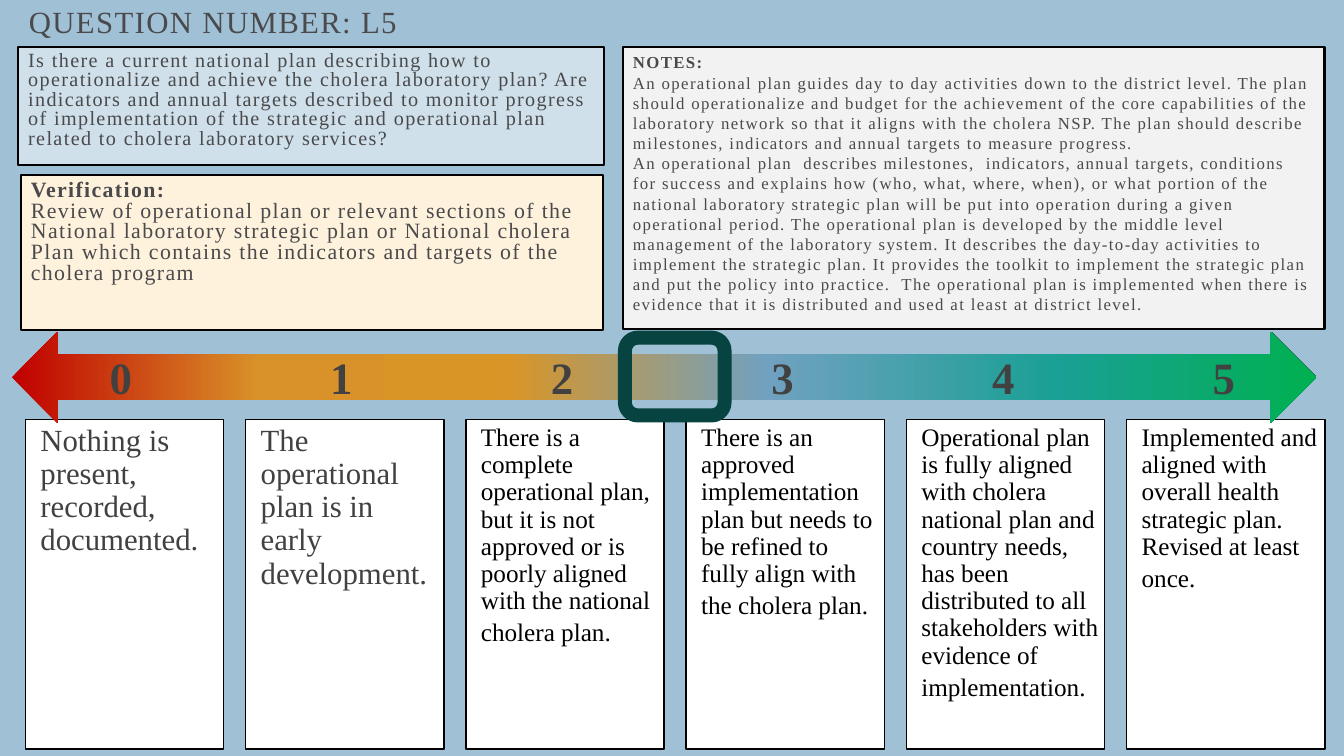
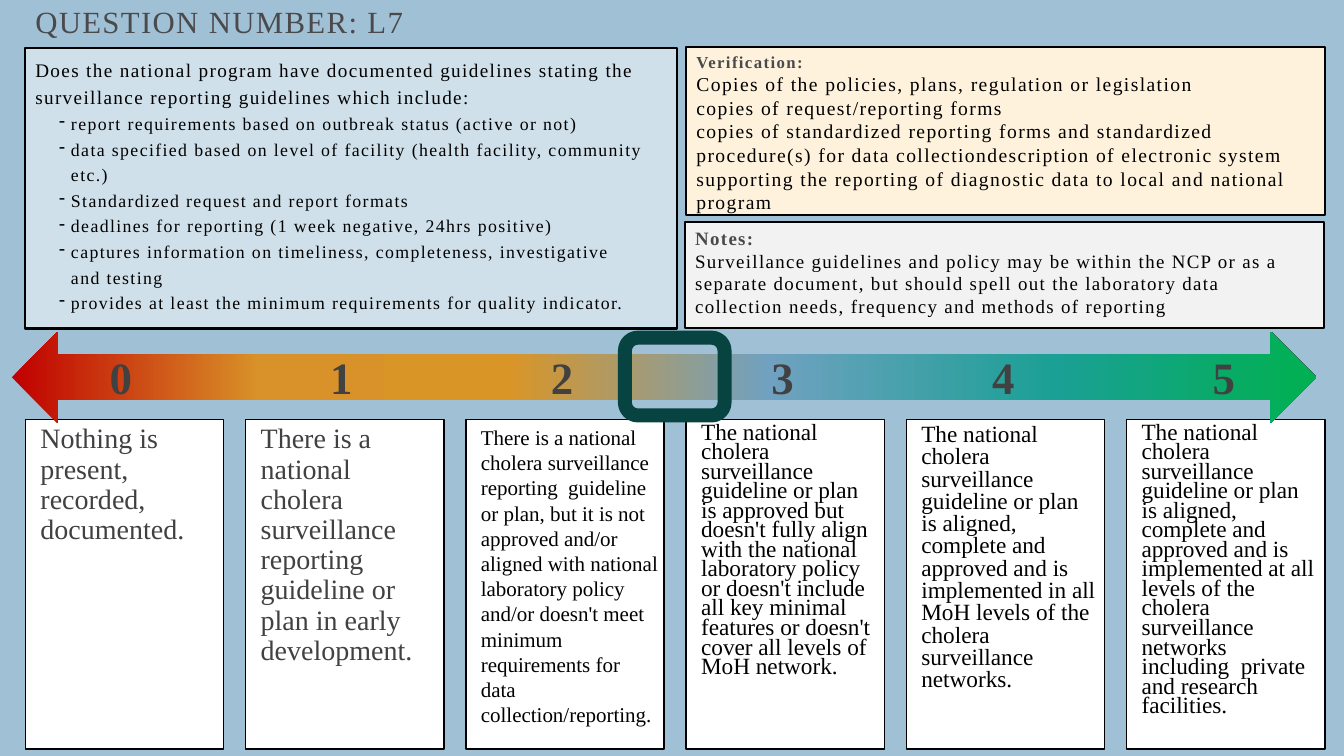
from dataclasses import dataclass
from typing import Any

from lxml import etree
from pptx import Presentation
from pptx import util as u
from pptx.dml import color as dml
from pptx.enum import shapes, text
from pptx.oxml import ns

COLORS = {
    "page": "A0C1D5",
    "question": "CFE0EA",
    "notes": "F2F2F2",
    "verification": "FEF2DD",
    "card": "FFFFFF",
    "black": "000000",
    "grey": "4A4A4C",
    "score": "414142",
    "frame": "074441",
}
SCALE_STOPS = {0: "C00000", 19: "D99229", 38: "DA9527",
               58: "70A1C0", 80: "1AA095", 100: "00B050"}
FONT = "Times New Roman"
CARD_STEP, LABEL_STEP = 5.55, 5.56
CARD_FORMAT = {f"margin_{side}": u.Cm(0.13)
               for side in ("left", "top", "right", "bottom")}
LABEL_FORMAT = {"vertical_anchor": text.MSO_ANCHOR.MIDDLE}


@dataclass(frozen=True)
class Box:
    """A rectangle in centimetres."""
    left: float
    top: float
    width: float
    height: float

    def lengths(self) -> tuple:
        return tuple(map(u.Cm, (self.left, self.top, self.width, self.height)))


@dataclass(frozen=True)
class Span:
    text: str
    size: float
    color: str = "grey"
    bold: bool = False
    tracking: int = 100


@dataclass(frozen=True)
class Para:
    spans: tuple[Span, ...]
    spacing: float = 1.0
    margin: float = 0
    hanging: float = 0
    bullet: str = ""
    align: Any = text.PP_ALIGN.LEFT


@dataclass(frozen=True)
class Panel:
    box: Box
    fill: str
    paras: tuple[Para, ...]


@dataclass(frozen=True)
class Card:
    text: str
    size: float
    color: str = "black"
    spacing: float = 0.9
    tail: float = 0  # size of a closing space, which deepens the last line


@dataclass(frozen=True)
class Question:
    title: str
    title_left: float
    panels: tuple[Panel, ...]
    cards: tuple[Card, ...]


def rgb(name: str) -> dml.RGBColor:
    return dml.RGBColor.from_string(COLORS[name])


def set_all(target: Any, values: dict) -> None:
    for name, value in values.items():
        setattr(target, name, value)


def add_span(para: Any, span: Span) -> None:
    for index, line in enumerate(span.text.split("\n")):
        if index:
            para.add_line_break()
        run = para.add_run()
        run.text = line
        set_all(run.font, {"name": FONT, "size": u.Pt(span.size), "bold": span.bold})
        run.font.color.rgb = rgb(span.color)
        run.font._element.set("spc", str(span.tracking))


def write(shape: Any, paras: tuple[Para, ...], frame_format: dict | None = None) -> None:
    frame = shape.text_frame
    set_all(frame, {"word_wrap": True, "vertical_anchor": text.MSO_ANCHOR.TOP,
                    **(frame_format or {})})
    for index, item in enumerate(paras):
        para = frame.add_paragraph() if index else frame.paragraphs[0]
        props = para._p.get_or_add_pPr()
        props.set("marL", str(u.Cm(item.margin)))
        props.set("indent", str(-u.Cm(item.hanging)))
        if item.bullet:
            etree.SubElement(props, ns.qn("a:buChar"), char=item.bullet)
        set_all(para, {"alignment": item.align, "line_spacing": item.spacing})
        for span in item.spans:
            add_span(para, span)


def add_panel(parent: Any, panel: Panel, line: float = 1.5,
              frame_format: dict | None = None) -> None:
    shape = parent.add_shape(shapes.MSO_SHAPE.RECTANGLE, *panel.box.lengths())
    shape.shadow.inherit = False
    shape.fill.solid()
    shape.fill.fore_color.rgb = rgb(panel.fill)
    shape.line.color.rgb = rgb("black")
    shape.line.width = u.Pt(line)
    write(shape, panel.paras, frame_format)


def add_text(parent: Any, box: Box, para: Para, frame_format: dict | None = None) -> None:
    write(parent.add_textbox(*box.lengths()), (para,), frame_format)


def add_cards(page: Any, cards: tuple[Card, ...]) -> None:
    group = page.shapes.add_group_shape().shapes
    for index, card in enumerate(cards):
        spans = (Span(card.text, card.size, card.color, tracking=0),)
        if card.tail:
            spans += (Span(" ", card.tail, "score", tracking=0),)
        box = Box(0.64 + index * CARD_STEP, 10.57, 5, 8.31)
        para = Para(spans, card.spacing, margin=0.25)
        add_panel(group, Panel(box, "card", (para,)), 1, CARD_FORMAT)


def add_scale(page: Any) -> None:
    """Draw the graded arrow with its scores 0 to 5."""
    group = page.shapes.add_group_shape().shapes
    arrow = group.add_shape(shapes.MSO_SHAPE.LEFT_RIGHT_ARROW,
                            *Box(0.3, 8.36, 32.87, 2.29).lengths())
    arrow.shadow.inherit = False
    arrow.line.fill.background()
    arrow.fill.gradient()
    arrow.fill.gradient_angle = 0
    stops = arrow._element.spPr.find(".//" + ns.qn("a:gsLst"))
    for old in list(stops):
        stops.remove(old)
    for percent, value in SCALE_STOPS.items():
        stop = etree.SubElement(stops, ns.qn("a:gs"), pos=str(percent * 1000))
        etree.SubElement(stop, ns.qn("a:srgbClr"), val=value)
    for score in range(6):
        label = Span(str(score), 32, "score", True, 0)
        add_text(group, Box(2.13 + score * LABEL_STEP, 9.12, 1.83, 0.74),
                 Para((label,), align=text.PP_ALIGN.CENTER), LABEL_FORMAT)


def add_score_frame(page: Any) -> None:
    frame = page.shapes.add_shape(shapes.MSO_SHAPE.ROUNDED_RECTANGLE,
                                  *Box(15.75, 8.51, 2.51, 1.96).lengths())
    frame.shadow.inherit = False
    frame.fill.background()
    frame.line.color.rgb = rgb("frame")
    frame.line.width = u.Pt(10)


def add_question(deck: Any, question: Question) -> None:
    page = deck.slides.add_slide(deck.slide_layouts[6])
    page.background.fill.solid()
    page.background.fill.fore_color.rgb = rgb("page")
    add_text(page.shapes, Box(question.title_left, 0.13, 12.2, 1.14),
             Para((Span(question.title, 22),), 0.8))
    add_cards(page, question.cards)
    for panel in question.panels:
        add_panel(page.shapes, panel)
    add_scale(page)
    add_score_frame(page)


REPORTING_ITEMS = (
    "report requirements based on outbreak status (active or not)",
    "data specified based on level of facility (health facility, community etc.)",
    "Standardized request and report formats",
    "deadlines for reporting (1 week negative, 24hrs positive)",
    "captures information on timeliness, completeness, investigative\nand testing",
    "provides at least the minimum requirements for quality indicator.",
)

QUESTIONS = (
    Question(
        "QUESTION NUMBER: L5", 0.48,
        (
            Panel(Box(0.46, 1.19, 14.76, 2.97), "question", (
                Para((Span("Is there a current national plan describing how to operationalize and achieve the cholera laboratory plan? Are indicators and annual targets described to monitor progress of implementation of the strategic and operational plan related to cholera laboratory services?", 14.4),), 0.8),
            )),
            Panel(Box(15.7, 1.19, 17.68, 7.11), "notes", (
                Para((
                    Span("NOTES:\n", 12, bold=True),
                    Span("An operational plan guides day to day activities down to the district level. The plan should operationalize and budget for the achievement of the core capabilities of the laboratory network so that it aligns with the cholera NSP. The plan should describe milestones, indicators and annual targets to measure progress.", 12),
                )),
                Para((Span("An operational plan  describes milestones,  indicators, annual targets, conditions for success and explains how (who, what, where, when), or what portion of the national laboratory strategic plan will be put into operation during a given operational period. The operational plan is developed by the middle level management of the laboratory system. It describes the day-to-day activities to implement the strategic plan. It provides the toolkit to implement the strategic plan and put the policy into practice.  The operational plan is implemented when there is evidence that it is distributed and used at least at district level.", 12),)),
            )),
            Panel(Box(0.53, 4.42, 14.66, 3.89), "verification", (
                Para((Span("Verification:", 15.6, bold=True),), 0.8),
                Para((Span("Review of operational plan or relevant sections of the National laboratory strategic plan or National cholera Plan which contains the indicators and targets of the cholera program", 15.6),), 0.8),
            )),
        ),
        (
            Card("Nothing is present, recorded, documented.", 22, "score"),
            Card("The operational plan is in early development.", 22, "score"),
            Card("There is a complete operational plan, but it is not approved or is poorly aligned with the national cholera plan.", 18, tail=22),
            Card("There is an approved implementation plan but needs to be refined to fully align with the cholera plan.", 18, tail=22),
            Card("Operational plan is fully aligned with cholera national plan and country needs, has been distributed to all stakeholders with evidence of implementation.", 18, tail=22),
            Card("Implemented and aligned with overall health strategic plan. Revised at least once.", 18, tail=22),
        ),
    ),
    Question(
        "QUESTION NUMBER: L7", 0.64,
        (
            Panel(Box(0.64, 1.22, 16.43, 7.06), "question", (
                Para((Span("Does the national program have documented guidelines stating the surveillance reporting guidelines which include:", 13.7, "black"),), 1.2),
                *(Para((Span(item, 12.7, "black"),), 1.2, 0.9, 0.3, "-")
                  for item in REPORTING_ITEMS),
            )),
            Panel(Box(17.27, 5.59, 16.1, 2.67), "notes", (
                Para((Span("Notes:", 13.5, bold=True),)),
                Para((Span("Surveillance guidelines and policy may be within the NCP or as a separate document, but should spell out the laboratory data collection needs, frequency and methods of reporting", 13.5, "black"),)),
            )),
            Panel(Box(17.3, 1.19, 16.1, 4.22), "verification", (
                Para((Span("Verification:", 12, bold=True),)),
                Para((Span("Copies of the policies, plans, regulation or legislation\ncopies of request/reporting forms\ncopies of standardized reporting forms and standardized procedure(s) for data collectiondescription of electronic system supporting the reporting of diagnostic data to local and national program", 14, "black"),)),
            )),
        ),
        (
            Card("Nothing is present, recorded, documented.", 20, "score"),
            Card("There is a national cholera surveillance reporting  guideline or plan in early development.", 20, "score"),
            Card("There is a national cholera surveillance reporting  guideline or plan, but it is not approved and/or aligned with national laboratory policy and/or doesn't meet minimum requirements for data collection/reporting.", 15, spacing=1.0),
            Card("The national cholera surveillance guideline or plan is approved but doesn't fully align with the national laboratory policy or doesn't include all key minimal features or doesn't cover all levels of MoH network.", 16.6, spacing=0.7),
            Card("The national cholera surveillance guideline or plan is aligned, complete and approved and is implemented in all MoH levels of the cholera surveillance networks.", 16.6, spacing=0.8),
            Card("The national cholera surveillance guideline or plan is aligned, complete and approved and is implemented at all levels of the cholera surveillance networks including  private and research facilities.", 16.6, spacing=0.7),
        ),
    ),
)


def main() -> None:
    deck = Presentation()
    set_all(deck, {"slide_width": u.Cm(33.87), "slide_height": u.Cm(19.05)})
    for question in QUESTIONS:
        add_question(deck, question)
    deck.save("out.pptx")


if __name__ == "__main__":
    main()
